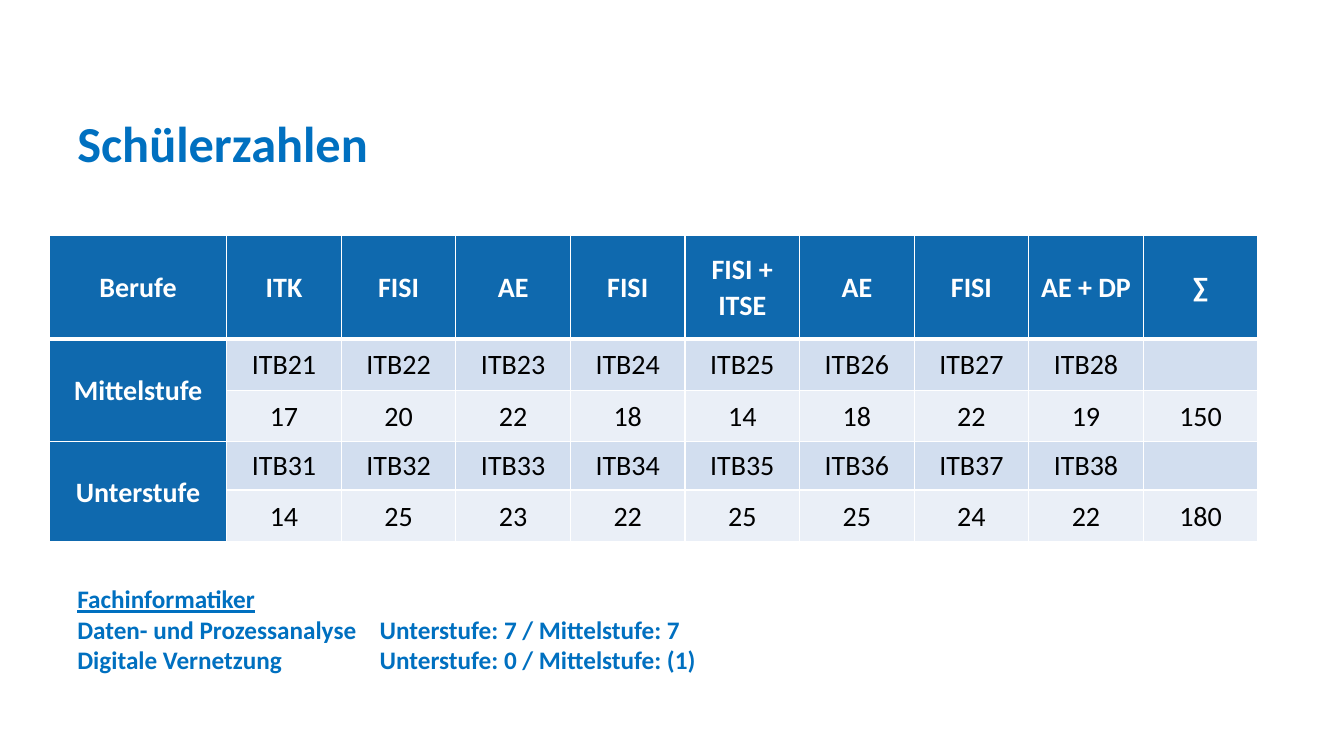
import pptx
import pptx.dml.color
import pptx.enum.text
import pptx.oxml
import pptx.oxml.ns
import pptx.util

Pt = pptx.util.Pt
TITLE = "Schülerzahlen"
ROWS = [
    ["Berufe", "ITK", "FISI", "AE", "FISI", "FISI + ITSE", "AE", "FISI", "AE + DP", "∑"],
    ["Mittelstufe"] + [f"ITB2{n}" for n in range(1, 9)] + [""],
    ["", "17", "20", "22", "18", "14", "18", "22", "19", "150"],
    ["Unterstufe"] + [f"ITB3{n}" for n in range(1, 9)] + [""],
    ["", "14", "25", "23", "22", "25", "25", "24", "22", "180"],
]
NOTES = [
    "Fachinformatiker",
    "Daten- und Prozessanalyse\tUnterstufe: 7 / Mittelstufe: 7",
    "Digitale Vernetzung\tUnterstufe: 0 / Mittelstufe: (1)",
]
FONT = "Calibri"
BLUE, HEAD, WHITE, BLACK = "0070C0", "0F69AE", "FFFFFF", "000000"
BANDS = ["EAEFF7", "D2DEEF"]
LEFT, TOP, WIDTH = 35.3, 167.8, 863.3
FIRST = 126.7
HEIGHTS = [74.2, 36.7, 36.7, 34.6, 36.7]
TAB = 216


def paint(target, color):
    """Give a font or a fill one solid colour."""
    if hasattr(target, "solid"):
        target.solid()
        target = target.fore_color
    else:
        target = target.color
    target.rgb = pptx.dml.color.RGBColor.from_string(color)


def style(par, size, color, bold):
    for run in par.runs:
        run.font.name = FONT
        run.font.size = Pt(size)
        run.font.bold = bold
        paint(run.font, color)


def add_text(slide, box, lines, size):
    frame = slide.shapes.add_textbox(*[Pt(v) for v in box]).text_frame
    frame.word_wrap = True
    frame.text = "\n".join(lines)
    for par in frame.paragraphs:
        style(par, size, BLUE, True)
    return frame


def set_tab(par, pos):
    space = pptx.oxml.ns.nsdecls("a")
    par._p.get_or_add_pPr().append(pptx.oxml.parse_xml(
        f'<a:tabLst {space}><a:tab pos="{Pt(pos)}" algn="l"/></a:tabLst>'))


def add_edges(cell, widths):
    """Draw white cell borders, in the order left, right, top, bottom."""
    space = pptx.oxml.ns.nsdecls("a")
    for side, width in zip("LRTB", widths):
        cell._tc.get_or_add_tcPr().append(pptx.oxml.parse_xml(
            f'<a:ln{side} {space} w="{Pt(width)}"><a:solidFill>'
            f'<a:srgbClr val="{WHITE}"/></a:solidFill></a:ln{side}>'))


def fill_cell(cell, text, row, col):
    head = row == 0 or col == 0
    add_edges(cell, [1, 1, 3 if row == 1 else 1, 3 if row == 0 else 1])
    paint(cell.fill, HEAD if head else BANDS[row % 2])
    cell.margin_left = cell.margin_right = Pt(3.6)
    cell.margin_top = cell.margin_bottom = 0
    cell.vertical_anchor = pptx.enum.text.MSO_ANCHOR.MIDDLE
    cell.text = text
    par = cell.text_frame.paragraphs[0]
    par.alignment = pptx.enum.text.PP_ALIGN.CENTER
    if head or row % 2 == 0:
        par.line_spacing = 1.07
    style(par, 20, WHITE if head else BLACK, head)


def add_grid(slide):
    count = len(ROWS[0])
    grid = slide.shapes.add_table(
        len(ROWS), count, Pt(LEFT), Pt(TOP), Pt(WIDTH), Pt(sum(HEIGHTS))).table
    for col in range(count):
        grid.columns[col].width = Pt(
            FIRST if col == 0 else (WIDTH - FIRST) / (count - 1))
    for row, texts in enumerate(ROWS):
        grid.rows[row].height = Pt(HEIGHTS[row])
        for col, text in enumerate(texts):
            fill_cell(grid.cell(row, col), text, row, col)
    for row in (1, 3):
        grid.cell(row, 0).merge(grid.cell(row + 1, 0))


def main():
    deck = pptx.Presentation()
    deck.slide_width, deck.slide_height = Pt(960), Pt(540)
    slide = deck.slides.add_slide(deck.slide_layouts[6])
    add_grid(slide)
    add_text(slide, (48.2, 76.3, 437.8, 51), [TITLE], 36)
    notes = add_text(slide, (48.2, 413.3, 849.6, 72.7), NOTES, 18)
    notes.paragraphs[0].runs[0].font.underline = True
    for par in notes.paragraphs[1:]:
        set_tab(par, TAB)
    deck.save("out.pptx")


if __name__ == "__main__":
    main()
